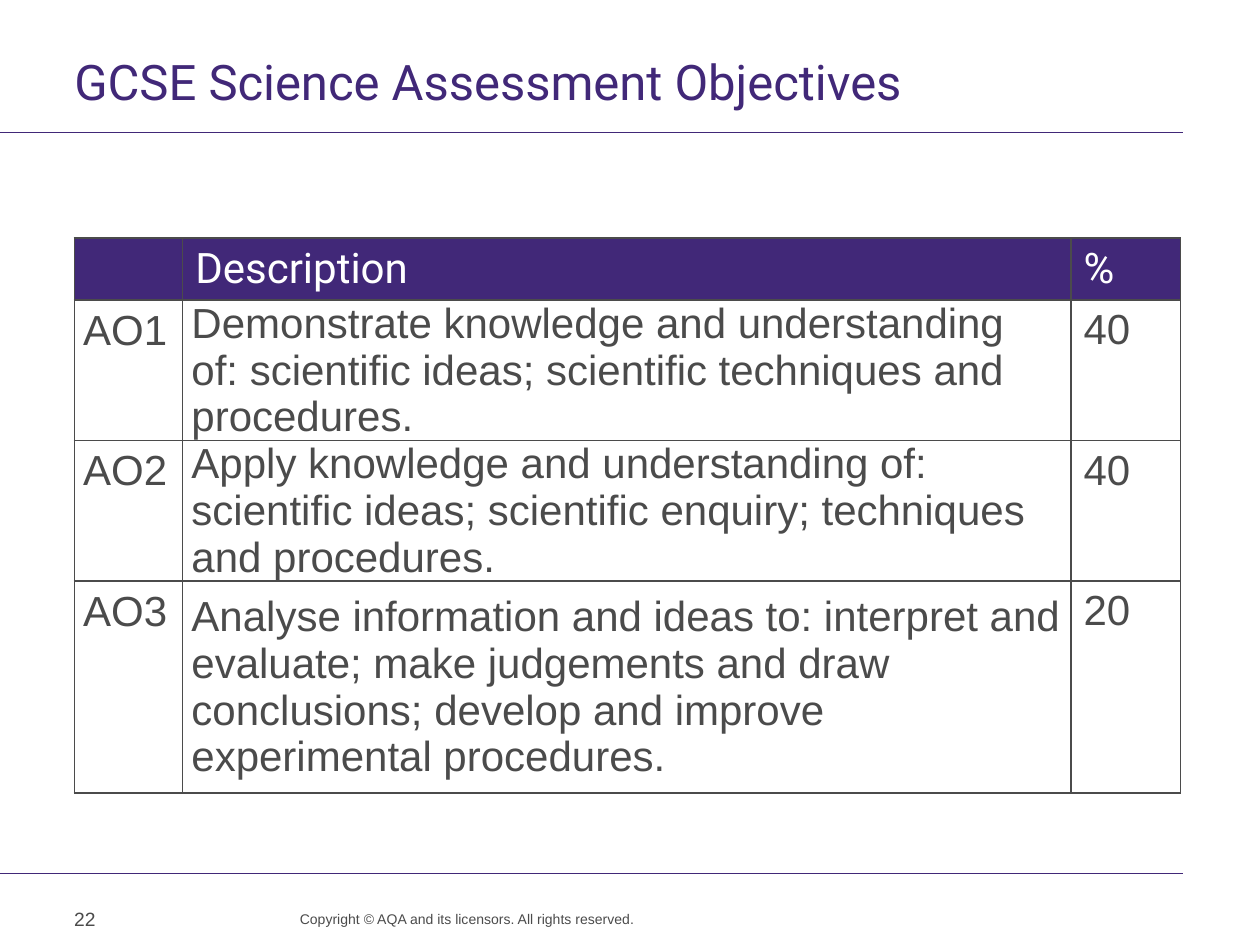
from lxml.etree import SubElement
from pptx import Presentation
from pptx.dml.color import RGBColor
from pptx.enum.shapes import MSO_CONNECTOR
from pptx.enum.text import MSO_ANCHOR, PP_ALIGN
from pptx.oxml.ns import qn
from pptx.util import Inches, Pt

PURPLE, GREY, WHITE = "412878", "4B4B4B", "FFFFFF"


def color(value):
    return RGBColor.from_string(value)


def add_run(p, text, size, font, fill):
    r = p.add_run()
    r.text = text
    r.font.size = Pt(size)
    r.font.name = font
    r.font.bold = False
    r.font.color.rgb = color(fill)


prs = Presentation()
prs.slide_width, prs.slide_height = Inches(10), Inches(7.5)
s = prs.slides.add_slide(prs.slide_layouts[5])

# Rules under the title and above the footer
for y in (1.05, 6.93):
    line = s.shapes.add_connector(
        MSO_CONNECTOR.STRAIGHT, Inches(0), Inches(y), Inches(9.39), Inches(y))
    line.line.color.rgb = color(PURPLE)
    line.line.width = Pt(0.6)
    SubElement(line._element.spPr, qn("a:effectLst"))

# Title
title = s.shapes.title
title.left, title.top = Inches(0.49), Inches(0.44)
title.width, title.height = Inches(9), Inches(0.52)
tf = title.text_frame
tf.vertical_anchor = MSO_ANCHOR.TOP
p = tf.paragraphs[0]
p.alignment = PP_ALIGN.LEFT
p.line_spacing = Pt(28)
add_run(p, "GCSE Science Assessment Objectives", 28, "Roboto", PURPLE)

# Assessment objectives table
rows = [
    ("", "Description", "%"),
    ("AO1", "Demonstrate knowledge and understanding of: scientific ideas; "
            "scientific techniques and procedures.", "40"),
    ("AO2", "Apply knowledge and understanding of: scientific ideas; "
            "scientific enquiry; techniques and procedures.", "40"),
    ("AO3", "Analyse information and ideas to: interpret and evaluate; make "
            "judgements and draw conclusions; develop and improve "
            "experimental procedures.", "20"),
]
col_widths = (0.86, 7.05, 0.87)
row_heights = (0.49, 1.11, 1.11, 1.68)
table = s.shapes.add_table(
    len(rows), len(col_widths), Inches(0.59), Inches(1.89),
    Inches(sum(col_widths)), Inches(sum(row_heights))).table
for column, width in zip(table.columns, col_widths):
    column.width = Inches(width)
for row, height in zip(table.rows, row_heights):
    row.height = Inches(height)

for i, texts in enumerate(rows):
    for j, text in enumerate(texts):
        cell = table.cell(i, j)
        header = i == 0
        p = cell.text_frame.paragraphs[0]
        if not header and j < 2:
            cell.margin_left = cell.margin_right = Inches(0.07)
            cell.margin_top = cell.margin_bottom = Inches(0)
            if j == 0:
                p.line_spacing = 1.15
            else:
                cell.vertical_anchor = MSO_ANCHOR.MIDDLE
        if text:
            add_run(p, text, 24, "Roboto" if header else "Arial",
                    WHITE if header else GREY)

        # Borders come before the fill in the cell properties
        tc_pr = cell._tc.get_or_add_tcPr()
        for side in ("lnL", "lnR", "lnT", "lnB"):
            ln = SubElement(tc_pr, qn(f"a:{side}"), w=str(Pt(1)))
            SubElement(SubElement(ln, qn("a:solidFill")),
                       qn("a:srgbClr"), val=GREY)
        if header:
            cell.fill.solid()
            cell.fill.fore_color.rgb = color(PURPLE)
        else:
            cell.fill.background()

# Footer: copyright line and page number
footers = [
    ("Copyright © AQA and its licensors. All rights reserved.",
     8, (2.38, 7.23, 2.93, 0.26), (0, 0)),
    ("22", 11, (0.49, 7.15, 0.76, 0.4), (0.1, 0.05)),
]
for text, size, box, (inset_x, inset_y) in footers:
    tf = s.shapes.add_textbox(*map(Inches, box)).text_frame
    tf.word_wrap = True
    tf.margin_left = Inches(inset_x)
    tf.margin_top = tf.margin_bottom = Inches(inset_y)
    add_run(tf.paragraphs[0], text, size, "Arial", GREY)

prs.save("out.pptx")
